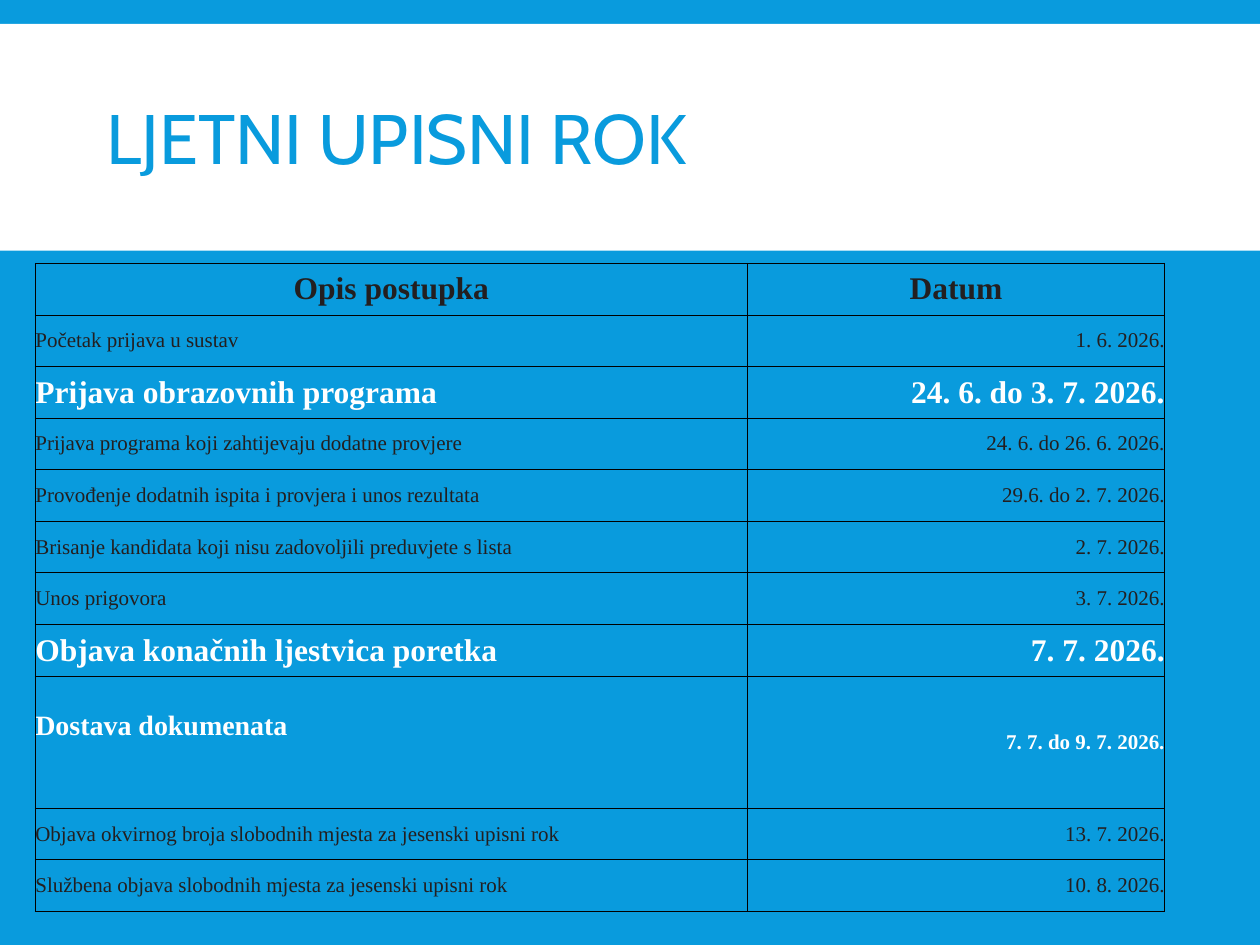
"""Build the summer enrolment schedule slide."""
from dataclasses import dataclass

from lxml import etree
from pptx import Presentation
from pptx.dml.color import RGBColor
from pptx.enum.shapes import MSO_SHAPE
from pptx.enum.text import MSO_ANCHOR, PP_ALIGN
from pptx.oxml.ns import qn
from pptx.util import Pt

RECTANGLE = MSO_SHAPE.RECTANGLE
MIDDLE = MSO_ANCHOR.MIDDLE
LEFT, CENTER, RIGHT = PP_ALIGN.LEFT, PP_ALIGN.CENTER, PP_ALIGN.RIGHT
BLUE, WHITE, DARK, BLACK = "099BDD", "FFFFFF", "231F20", "000000"
BODY_FONT, TITLE_FONT = "Times New Roman", "Cabin"
COLUMN_WIDTHS = (406.8, 238.6)
BORDER_WIDTH = 0.6


@dataclass(frozen=True)
class Style:
    size: float
    color: str = DARK
    bold: bool = False
    font: str = BODY_FONT


@dataclass(frozen=True)
class Step:
    description: str
    date: str
    style: Style
    date_style: Style | None = None
    centered: bool = False
    height: float = 29.5
    lift: float = 0


TITLE = Style(40, BLUE, font=TITLE_FONT)
HEADER = Style(18, bold=True)
PLAIN = Style(12)
KEY = Style(18, WHITE, True)

STEPS = (
    Step("Opis postupka", "Datum", HEADER, centered=True),
    Step("Početak prijava u sustav", "1. 6. 2026.", PLAIN),
    Step("Prijava obrazovnih programa", "24. 6. do 3. 7. 2026.", KEY),
    Step("Prijava programa koji zahtijevaju dodatne provjere",
         "24. 6. do 26. 6. 2026.", PLAIN),
    Step("Provođenje dodatnih ispita i provjera i unos rezultata",
         "29.6. do 2. 7. 2026.", PLAIN),
    Step("Brisanje kandidata koji nisu zadovoljili preduvjete s lista",
         "2. 7. 2026.", PLAIN),
    Step("Unos prigovora", "3. 7. 2026.", PLAIN),
    Step("Objava konačnih ljestvica poretka", "7. 7. 2026.", KEY),
    Step("Dostava dokumenata", "7. 7. do 9. 7. 2026.", Style(16, WHITE, True),
         date_style=Style(12, WHITE, True), height=75.6, lift=18),
    Step("Objava okvirnog broja slobodnih mjesta za jesenski upisni rok",
         "13. 7. 2026.", PLAIN),
    Step("Službena objava slobodnih mjesta za jesenski upisni rok",
         "10. 8. 2026.", PLAIN),
)


def paint(color_format, value: str) -> None:
    color_format.rgb = RGBColor.from_string(value)


def write(frame, text: str, style: Style, align=LEFT) -> None:
    para = frame.paragraphs[0]
    para.alignment = align
    span = para.add_run()
    span.text = text
    span.font.name = style.font
    span.font.size = Pt(style.size)
    span.font.bold = style.bold
    paint(span.font.color, style.color)


def add_borders(cell) -> None:
    properties = cell._tc.get_or_add_tcPr()
    for side in ("lnL", "lnR", "lnT", "lnB"):
        line = etree.SubElement(properties, qn(f"a:{side}"), w=str(Pt(BORDER_WIDTH)))
        fill = etree.SubElement(line, qn("a:solidFill"))
        etree.SubElement(fill, qn("a:srgbClr"), val=BLACK)


def fill_cell(cell, text: str, style: Style, align, lift: float = 0) -> None:
    cell.margin_left = cell.margin_right = cell.margin_top = Pt(0)
    cell.margin_bottom = Pt(lift)
    cell.vertical_anchor = MIDDLE
    add_borders(cell)
    cell.fill.background()
    write(cell.text_frame, text, style, align)


def add_title(page) -> None:
    band = page.shapes.add_shape(RECTANGLE, Pt(0), Pt(13.7), Pt(720), Pt(129.6))
    band.shadow.inherit = False
    band.fill.solid()
    paint(band.fill.fore_color, WHITE)
    band.line.fill.background()
    box = page.shapes.add_textbox(Pt(54), Pt(22.3), Pt(612), Pt(118.8))
    frame = box.text_frame
    frame.word_wrap = True
    frame.vertical_anchor = MIDDLE
    write(frame, "LJETNI UPISNI ROK", TITLE)
    frame.paragraphs[0].line_spacing = 0.85


def add_schedule(page) -> None:
    height = sum(step.height for step in STEPS)
    table = page.shapes.add_table(
        len(STEPS), len(COLUMN_WIDTHS), Pt(20.2), Pt(150.5),
        Pt(sum(COLUMN_WIDTHS)), Pt(height)).table
    table.first_row = table.horz_banding = False
    for column, width in zip(table.columns, COLUMN_WIDTHS):
        column.width = Pt(width)
    for row, step in zip(table.rows, STEPS):
        row.height = Pt(step.height)
        description, date = row.cells
        fill_cell(description, step.description, step.style,
                  CENTER if step.centered else LEFT, step.lift)
        fill_cell(date, step.date, step.date_style or step.style,
                  CENTER if step.centered else RIGHT)


def main() -> None:
    deck = Presentation()
    deck.slide_width, deck.slide_height = Pt(720), Pt(540)
    page = deck.slides.add_slide(deck.slide_layouts[6])
    page.background.fill.solid()
    paint(page.background.fill.fore_color, BLUE)
    add_title(page)
    add_schedule(page)
    deck.save("out.pptx")


if __name__ == "__main__":
    main()
